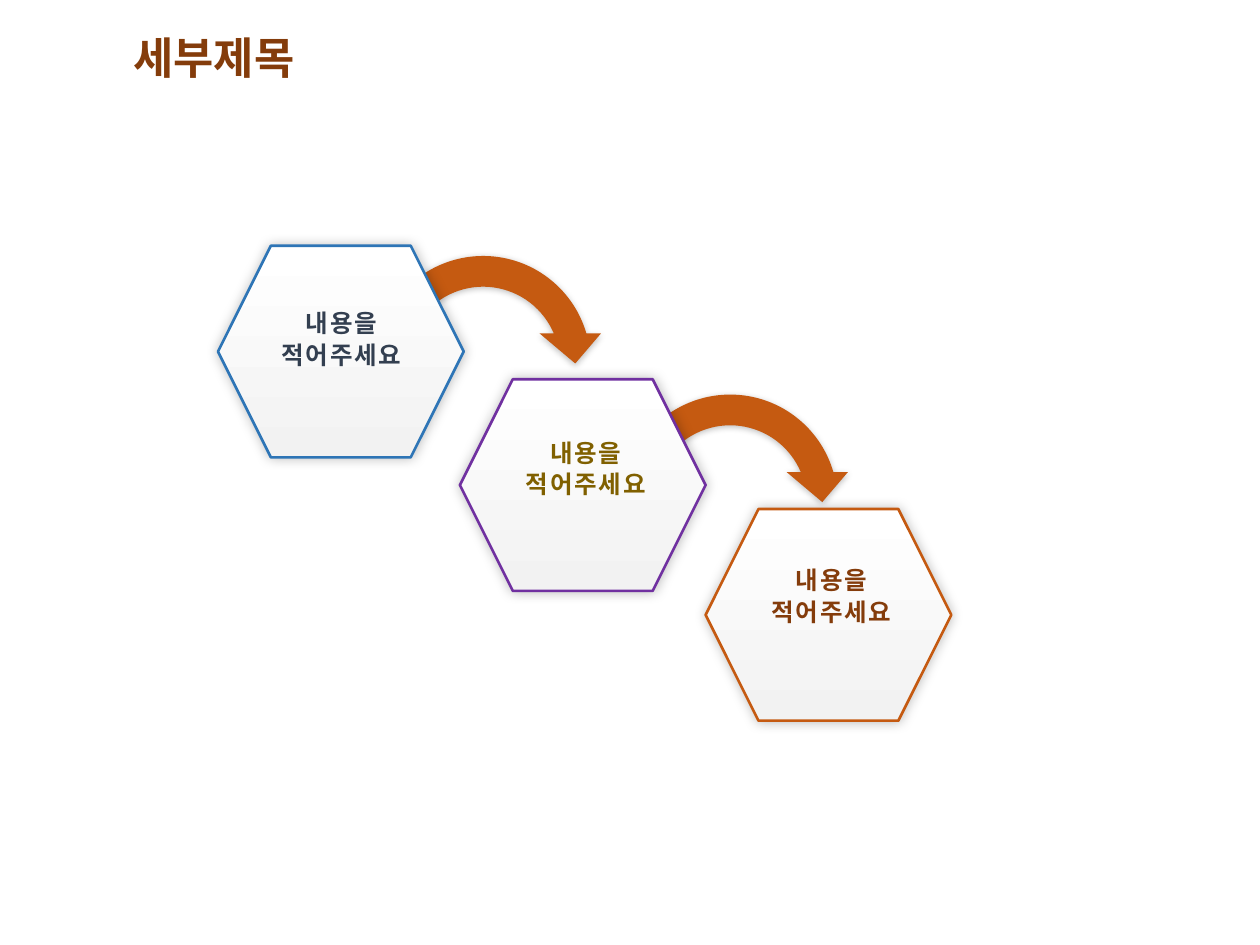
import pptx
import pptx.util
import pptx.dml.color
import pptx.enum.shapes
import pptx.enum.text
import pptx.oxml
import pptx.oxml.ns

presentation = pptx.Presentation()
presentation.slide_width = pptx.util.Inches(10)
presentation.slide_height = pptx.util.Inches(7.5)
column = presentation.slide_width / 10
row = presentation.slide_height / 7.5


def color(value):
    return pptx.dml.color.RGBColor.from_string(value)


def add_shape(kind, left, top, width, height, blur, distance):
    shape = slide.shapes.add_shape(
        kind, int(left * column), int(top * row), int(width * column), int(height * row))
    shape.shadow.inherit = False
    effects = shape._element.spPr.find(pptx.oxml.ns.qn("a:effectLst"))
    effects.append(pptx.oxml.parse_xml(
        f'<a:outerShdw {pptx.oxml.ns.nsdecls("a")} blurRad="{pptx.util.Pt(blur)}" '
        f'dist="{pptx.util.Pt(distance)}" dir="5400000" algn="ctr" rotWithShape="0">'
        '<a:srgbClr val="000000"><a:alpha val="25000"/></a:srgbClr></a:outerShdw>'))
    return shape


slide = presentation.slides.add_slide(presentation.slide_layouts[5])
title = slide.shapes.title
title.left, title.top = int(0.96 * column), int(0.19 * row)
title.width, title.height = int(8.62 * column), int(0.57 * row)
title.text_frame.text = "세부제목"
title.text_frame.vertical_anchor = pptx.enum.text.MSO_ANCHOR.MIDDLE
paragraph = title.text_frame.paragraphs[0]
paragraph.alignment = pptx.enum.text.PP_ALIGN.LEFT
paragraph.line_spacing = 0.9
paragraph.font.name = "Calibri"
paragraph.font.size = pptx.util.Pt(25)
paragraph.font.bold = True
paragraph.font.color.rgb = color("843C0B")

for left, top in [(4.82, 3.01), (2.86, 1.91)]:
    arrow = add_shape(pptx.enum.shapes.MSO_SHAPE.CIRCULAR_ARROW, left, top, 1.95, 1.95, 4, 1)
    arrow.fill.solid()
    arrow.fill.fore_color.rgb = color("C55A11")
    arrow.line.fill.background()

for left, top, outline in [(1.73, 1.95, "2E75B6"), (3.65, 3.01, "7030A0"), (5.6, 4.04, "C55A11")]:
    hexagon = add_shape(pptx.enum.shapes.MSO_SHAPE.HEXAGON, left, top, 1.95, 1.68, 7, 0)
    hexagon.fill.gradient()
    hexagon.fill.gradient_angle = 270
    for stop, position, shade in zip(hexagon.fill.gradient_stops, (0, 1), ("FFFFFF", "F2F2F2")):
        stop.position = position
        stop.color.rgb = color(shade)
    hexagon.line.color.rgb = color(outline)
    hexagon.line.width = pptx.util.Pt(1.5)

for left, top, ink in [(1.85, 2.38, "333F50"), (3.79, 3.41, "806000"), (5.74, 4.42, "843C0B")]:
    label = slide.shapes.add_textbox(
        int(left * column), int(top * row), int(1.72 * column), int(0.61 * row))
    label.text_frame.word_wrap = True
    label.text_frame.auto_size = pptx.enum.text.MSO_AUTO_SIZE.SHAPE_TO_FIT_TEXT
    label.text_frame.text = "내용을\n적어주세요"
    for paragraph in label.text_frame.paragraphs:
        paragraph.alignment = pptx.enum.text.PP_ALIGN.CENTER
        paragraph.line_spacing = pptx.util.Pt(18)
        font = paragraph.runs[0].font
        font.name = "Noto Sans CJK KR"
        font.size = pptx.util.Pt(14)
        font.bold = True
        font.color.rgb = color(ink)
        properties = paragraph.runs[0]._r.get_or_add_rPr()
        properties.set("spc", "100")
        properties.find(pptx.oxml.ns.qn("a:latin")).addnext(pptx.oxml.parse_xml(
            f'<a:ea {pptx.oxml.ns.nsdecls("a")} typeface="Noto Sans CJK KR"/>'))

presentation.save("out.pptx")
